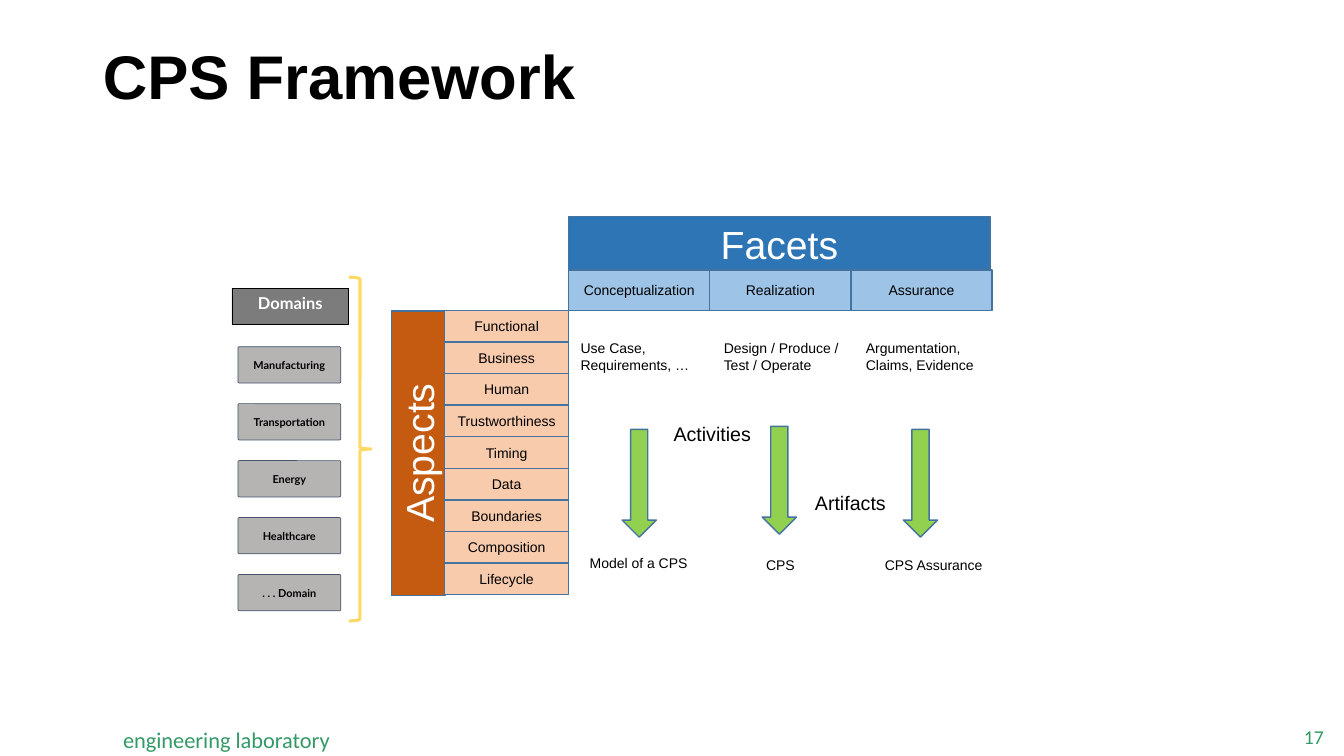
from lxml import etree
from pptx import Presentation
from pptx.dml.color import RGBColor
from pptx.enum.shapes import MSO_SHAPE
from pptx.enum.text import MSO_ANCHOR, MSO_AUTO_SIZE, PP_ALIGN
from pptx.oxml.ns import qn
from pptx.util import Inches, Pt

RECT, ROUNDED = MSO_SHAPE.RECTANGLE, MSO_SHAPE.ROUNDED_RECTANGLE
ARROW, BRACE = MSO_SHAPE.DOWN_ARROW, MSO_SHAPE.RIGHT_BRACE
LEFT, CENTER, RIGHT = PP_ALIGN.LEFT, PP_ALIGN.CENTER, PP_ALIGN.RIGHT
TOP, MIDDLE = MSO_ANCHOR.TOP, MSO_ANCHOR.MIDDLE
NO_AUTOFIT = MSO_AUTO_SIZE.NONE

BLACK = RGBColor(0x00, 0x00, 0x00)
WHITE = RGBColor(0xFF, 0xFF, 0xFF)
FOOTER_GREEN = RGBColor(0x33, 0x99, 0x66)
FACET_BLUE = RGBColor(0x2E, 0x75, 0xB6)
FACET_LIGHT = RGBColor(0x9D, 0xC3, 0xE6)
ASPECT_ORANGE = RGBColor(0xC5, 0x5A, 0x11)
ASPECT_LIGHT = RGBColor(0xF8, 0xCB, 0xAD)
OUTLINE_BLUE = RGBColor(0x43, 0x73, 0x9E)
ARROW_GREEN = RGBColor(0x92, 0xD0, 0x50)
DOMAIN_DARK = RGBColor(0x7C, 0x7C, 0x7C)
DOMAIN_GREY = RGBColor(0xAF, 0xAB, 0xAB)
DOMAIN_OUTLINE = RGBColor(0x44, 0x54, 0x6A)
BRACE_YELLOW = RGBColor(0xFF, 0xD9, 0x66)


def write(shape, text, size, font="Arial", color=BLACK, bold=False,
          align=CENTER, anchor=MIDDLE, inset=(0.1, 0.05), wrap=True):
    frame = shape.text_frame
    frame.auto_size = NO_AUTOFIT
    frame.word_wrap = wrap
    frame.vertical_anchor = anchor
    frame.margin_left = frame.margin_right = Inches(inset[0])
    frame.margin_top = frame.margin_bottom = Inches(inset[1])
    paragraph = frame.paragraphs[0]
    paragraph.alignment = align
    for index, line in enumerate(text.split("\n")):
        if index:
            paragraph.add_line_break()
        run = paragraph.add_run()
        run.text = line
        run.font.size = Pt(size)
        run.font.name = font
        run.font.bold = bold
        run.font.color.rgb = color


def add_block(kind, left, top, width, height, fill, line=OUTLINE_BLUE, weight=1):
    block = slide.shapes.add_shape(
        kind, Inches(left), Inches(top), Inches(width), Inches(height))
    block.shadow.inherit = False
    if fill is None:
        block.fill.background()
    else:
        block.fill.solid()
        block.fill.fore_color.rgb = fill
    block.line.color.rgb = line
    block.line.width = Pt(weight)
    return block


prs = Presentation()
prs.slide_width, prs.slide_height = Inches(13.33), Inches(7.5)
slide = prs.slides.add_slide(prs.slide_layouts[5])

title = slide.shapes.title
title.left, title.top = Inches(0.92), Inches(0.4)
title.width, title.height = Inches(11.5), Inches(0.78)
write(title, "CPS Framework", 44, bold=True, align=LEFT)
title.text_frame.paragraphs[0].line_spacing = 0.9

footer = slide.shapes.add_textbox(Inches(1.22), Inches(7.2), Inches(2.08), Inches(0.27))
write(footer, "engineering laboratory", 16, "Calibri", FOOTER_GREEN,
      align=LEFT, anchor=TOP, inset=(0, 0), wrap=False)
page_number = slide.shapes.add_textbox(Inches(12.51), Inches(7.18), Inches(0.62), Inches(0.26))
write(page_number, "17", 14, "Calibri", FOOTER_GREEN, align=RIGHT, inset=(0, 0))

facets = add_block(RECT, 5.64, 2.15, 4.18, 0.53, FACET_BLUE)
write(facets, "Facets", 28, color=WHITE)
aspects = add_block(RECT, 2.74, 4.23, 2.82, 0.53, ASPECT_ORANGE)
aspects.rotation = 270
write(aspects, "Aspects", 28, color=WHITE)

for column, name in enumerate(["Conceptualization", "Realization", "Assurance"]):
    facet = add_block(RECT, 5.64 + 1.4 * column, 2.68, 1.4, 0.4, FACET_LIGHT)
    write(facet, name, 10, inset=(0, 0))

aspect_names = ["Functional", "Business", "Human", "Trustworthiness", "Timing",
                "Data", "Boundaries", "Composition", "Lifecycle"]
aspect_height = 2.82 / len(aspect_names)
for row, name in enumerate(aspect_names):
    aspect = add_block(RECT, 4.41, 3.08 + aspect_height * row, 1.23, aspect_height, ASPECT_LIGHT)
    write(aspect, name, 10, inset=(0, 0))

for text, left, top, width, height, size, align in [
    ("Activities", 6.36, 4.14, 1.41, 0.41, 14, CENTER),
    ("Artifacts", 7.77, 4.82, 1.33, 0.41, 14, CENTER),
    ("Use Case,\nRequirements, …", 5.66, 3.32, 1.42, 0.53, 10, LEFT),
    ("Design / Produce / Test / Operate", 7.08, 3.32, 1.49, 0.53, 10, LEFT),
    ("Argumentation,\nClaims, Evidence", 8.49, 3.32, 1.34, 0.74, 10, LEFT),
    ("Model of a CPS", 5.75, 5.45, 1.31, 0.33, 10, LEFT),
    ("CPS", 7.5, 5.47, 0.6, 0.33, 10, LEFT),
    ("CPS Assurance", 8.63, 5.47, 1.26, 0.33, 10, CENTER),
]:
    label = slide.shapes.add_textbox(Inches(left), Inches(top), Inches(width), Inches(height))
    write(label, text, size, align=align, anchor=TOP)

for left, top in [(6.17, 4.26), (7.56, 4.23), (8.96, 4.26)]:
    add_block(ARROW, left, top, 0.34, 1.07, ARROW_GREEN)

domain_names = ["Manufacturing", "Transportation", "Energy", "Healthcare", ". . . Domain"]
for row, name in enumerate(domain_names):
    domain = add_block(ROUNDED, 2.36, 3.44 + 0.565 * row, 1.02, 0.36,
                       DOMAIN_GREY, DOMAIN_OUTLINE, 0.5)
    domain.adjustments[0] = 0.04
    fill_color = domain.fill._xPr.find(qn("a:solidFill"))[0]
    etree.SubElement(fill_color, qn("a:alpha")).set("val", "90000")
    write(domain, name, 7.8, "Lato", bold=True, inset=(0.02, 0.01), wrap=False)

domains = add_block(RECT, 2.3, 2.86, 1.16, 0.36, DOMAIN_DARK, BLACK, 0.5)
write(domains, "Domains", 11.7, "Lato", WHITE, bold=True, anchor=TOP)
add_block(BRACE, 3.46, 2.75, 0.22, 3.41, None, BRACE_YELLOW, 2.25)

prs.save("out.pptx")
